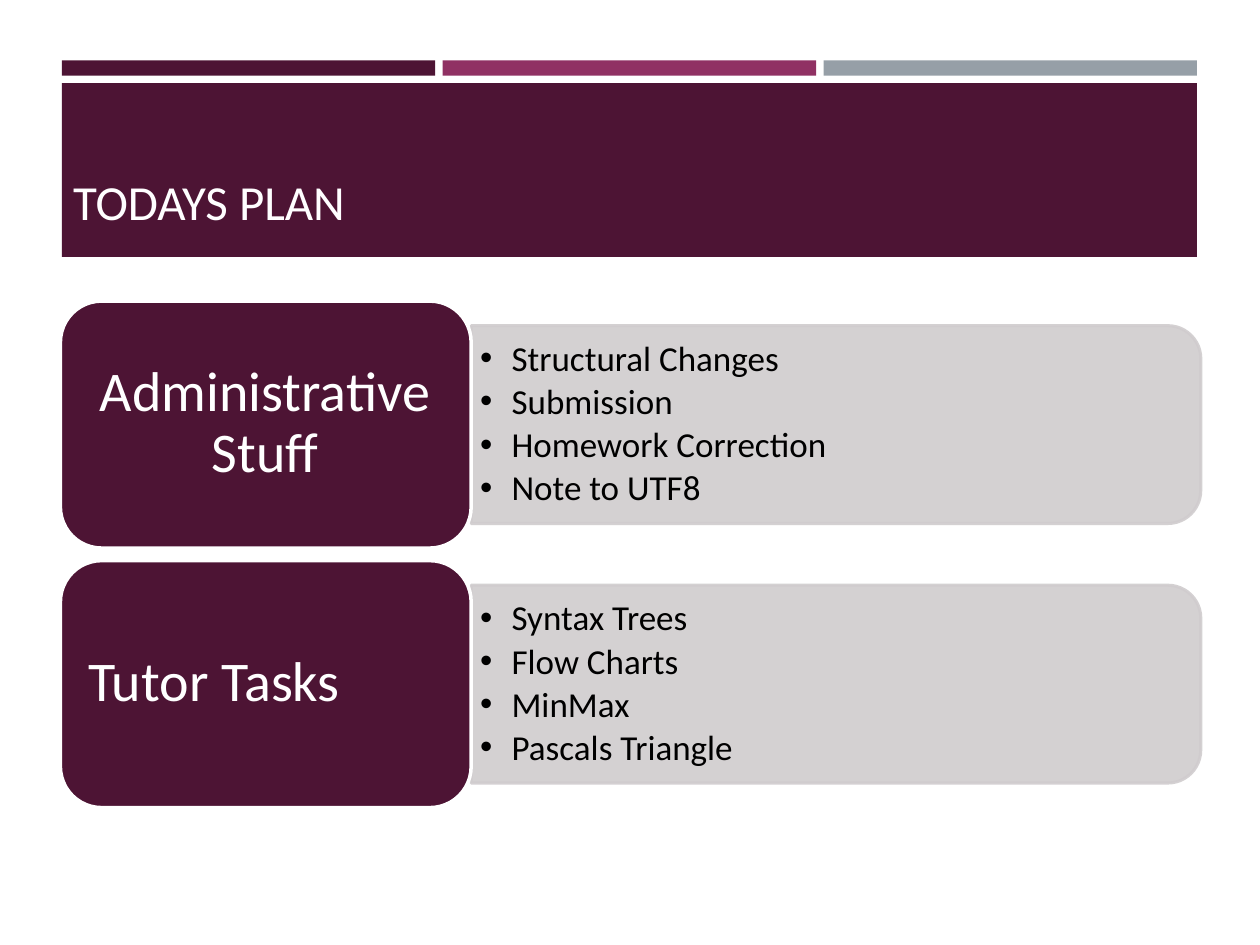
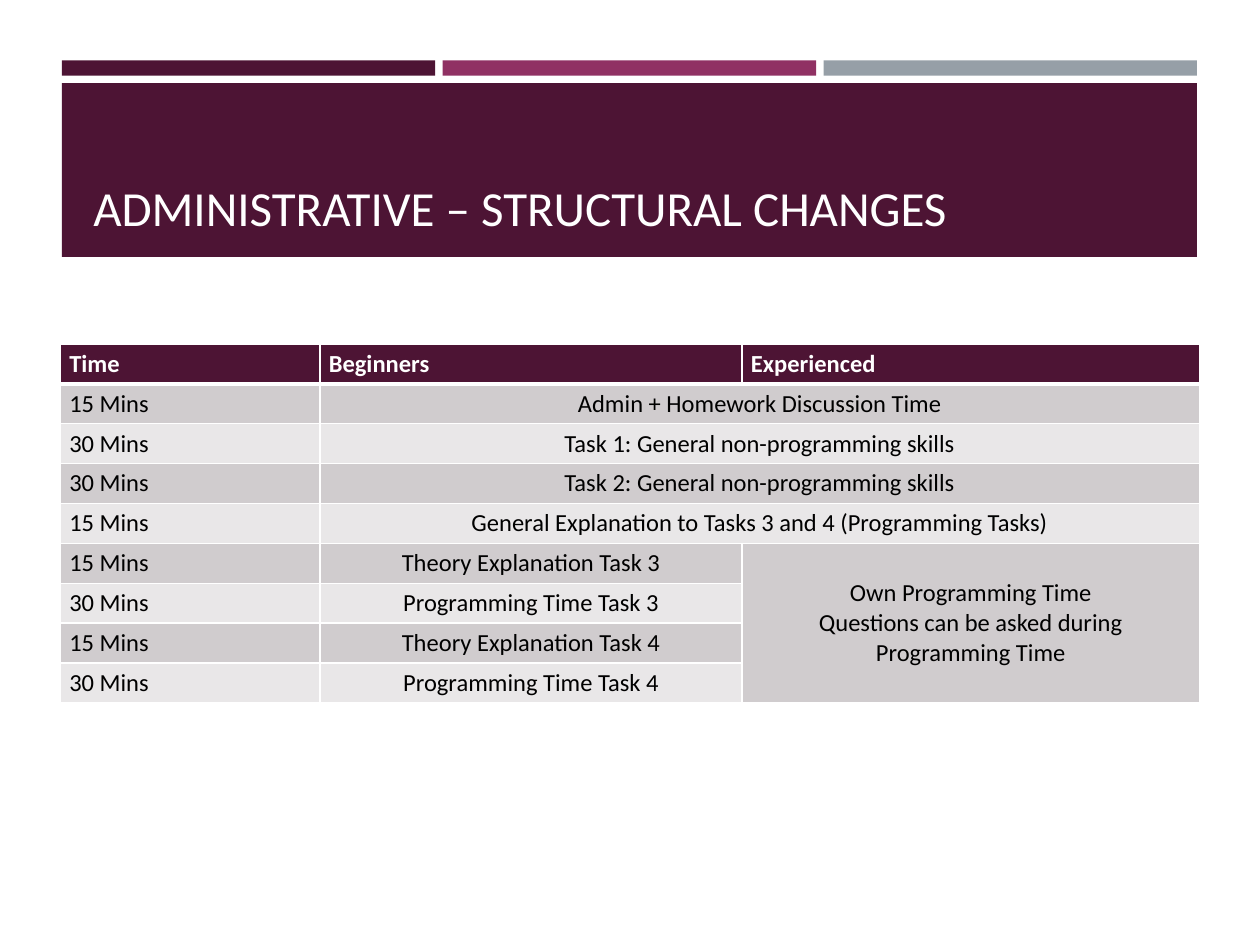
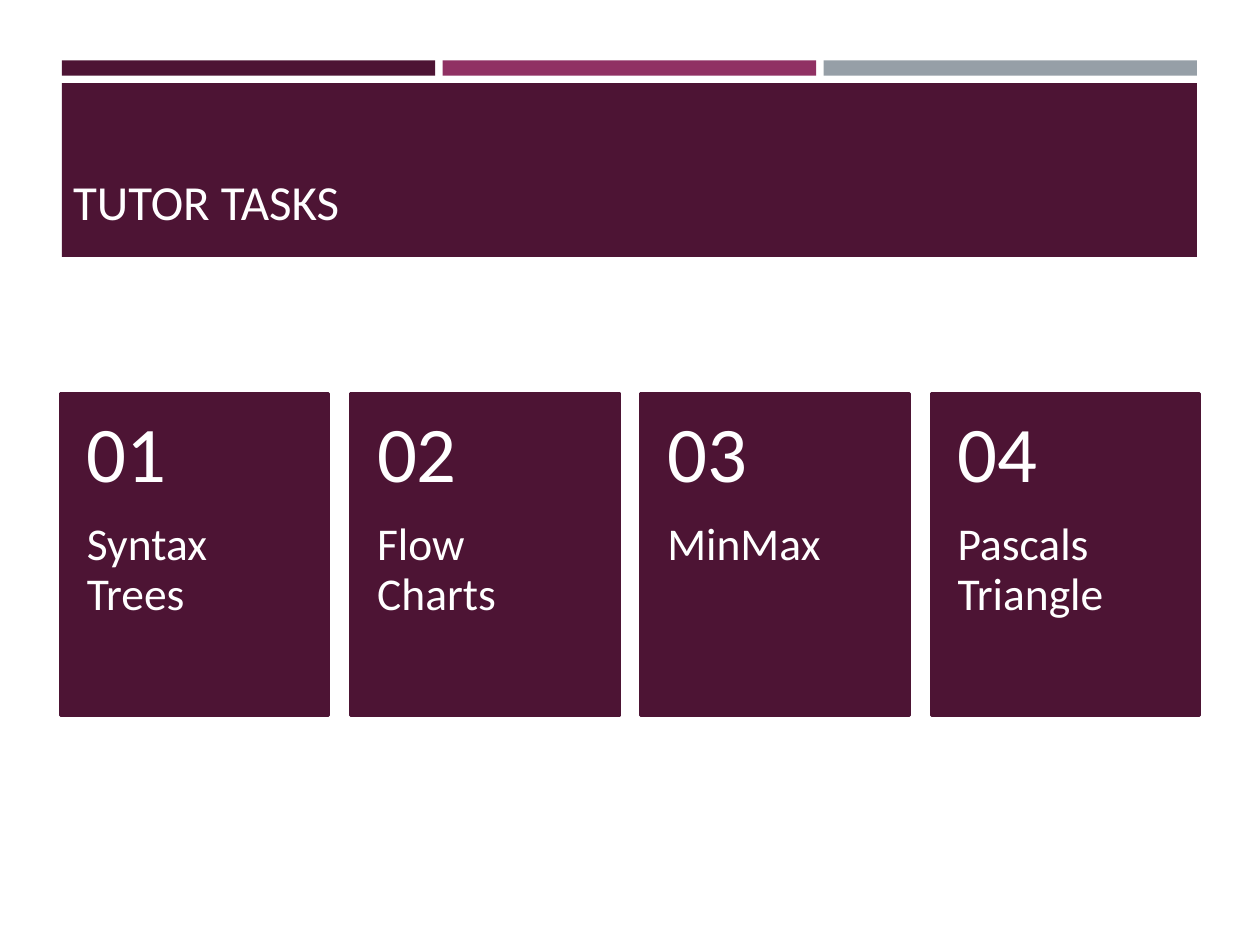
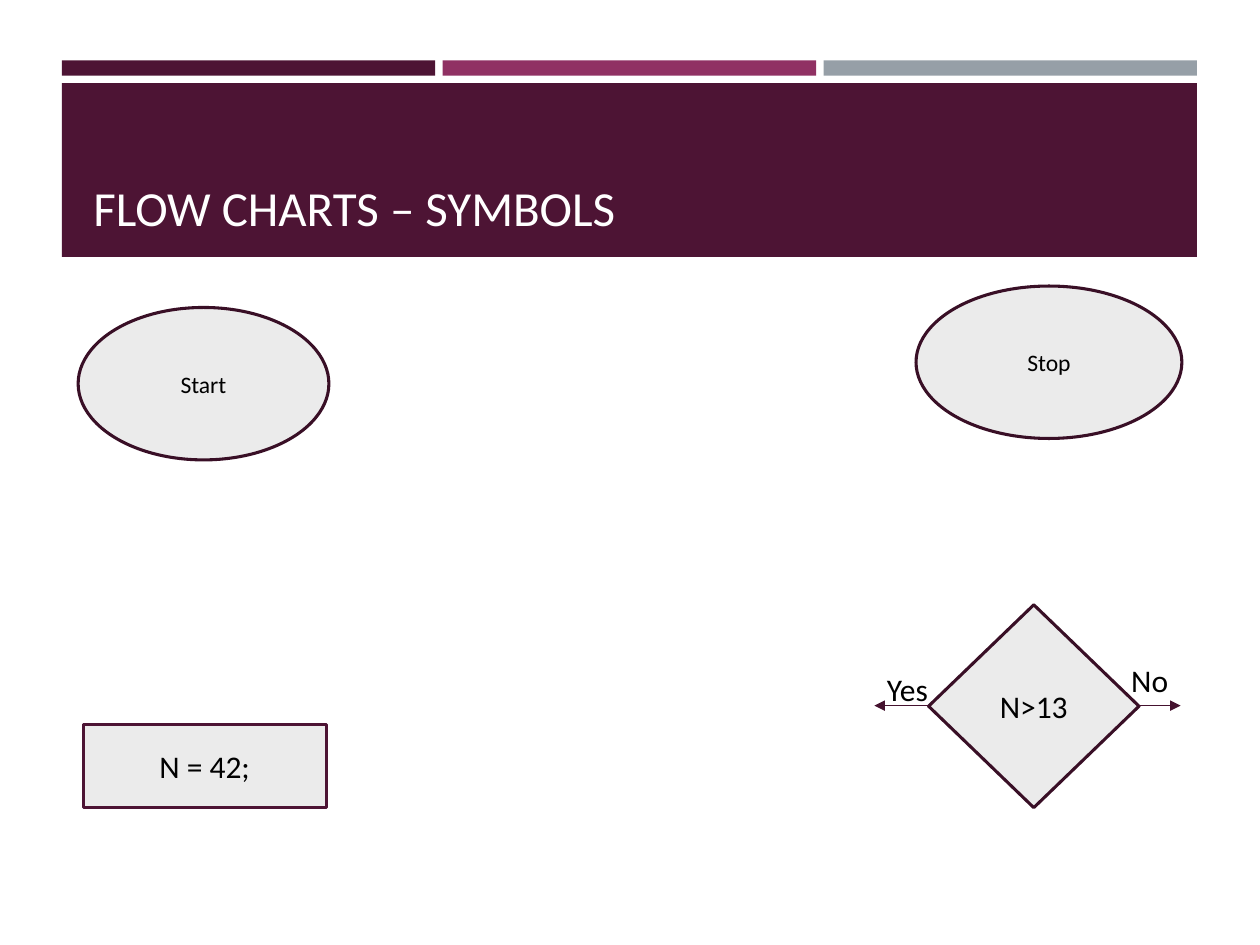
from dataclasses import dataclass

from pptx import Presentation
from pptx.dml.color import RGBColor
from pptx.enum.shapes import MSO_CONNECTOR, MSO_SHAPE
from pptx.enum.text import MSO_ANCHOR, MSO_AUTO_SIZE, PP_ALIGN
from pptx.oxml.ns import qn
from pptx.oxml.xmlchemy import OxmlElement
from pptx.util import Inches, Pt

LEFT, CENTER = PP_ALIGN.LEFT, PP_ALIGN.CENTER
TOP, MIDDLE, BOTTOM = MSO_ANCHOR.TOP, MSO_ANCHOR.MIDDLE, MSO_ANCHOR.BOTTOM
NO_FIT, GROW = MSO_AUTO_SIZE.NONE, MSO_AUTO_SIZE.SHAPE_TO_FIT_TEXT
RECT, ROUND_RECT = MSO_SHAPE.RECTANGLE, MSO_SHAPE.ROUNDED_RECTANGLE
ROUND_TOP = MSO_SHAPE.ROUND_2_SAME_RECTANGLE
OVAL, DIAMOND = MSO_SHAPE.OVAL, MSO_SHAPE.DIAMOND
STRAIGHT = MSO_CONNECTOR.STRAIGHT
TITLE_ONLY, TWO_CONTENT = 5, 3


@dataclass(frozen=True)
class Theme:
    font: str = "Calibri"
    plum: str = "4D1434"
    magenta: str = "903163"
    slate: str = "969FA7"
    panel: str = "D0CCCE"
    pale_row: str = "E9E7E8"
    symbol: str = "EBEBEB"
    outline: str = "390F26"
    arrow: str = "45122F"
    white: str = "FFFFFF"
    title_white: str = "FFFEFF"
    black: str = "000000"
    title_size: float = 28
    label_size: float = 32
    list_size: float = 20
    table_size: float = 14
    number_size: float = 45
    card_size: float = 26
    symbol_size: float = 18
    oval_size: float = 13.5
    line: float = 1.75


THEME = Theme()

# Content
PLAN = [
    ("Administrative Stuff", CENTER,
     ["Structural Changes", "Submission", "Homework Correction", "Note to UTF8"]),
    ("Tutor Tasks", LEFT,
     ["Syntax Trees", "Flow Charts", "MinMax", "Pascals Triangle"]),
]
TASKS = PLAN[1][2]
SCHEDULE = [
    ("Time", "Beginners", "Experienced"),
    ("15 Mins", "Admin + Homework Discussion Time"),
    ("30 Mins", "Task 1: General non-programming skills"),
    ("30 Mins", "Task 2: General non-programming skills"),
    ("15 Mins", "General Explanation to Tasks 3 and 4 (Programming Tasks)"),
    ("15 Mins", "Theory Explanation Task 3",
     "Own Programming Time\nQuestions can be asked during Programming Time"),
    ("30 Mins", "Programming Time Task 3", ""),
    ("15 Mins", "Theory Explanation Task 4", ""),
    ("30 Mins", "Programming Time Task 4", ""),
]
OWN_TIME_ROW = 5
SYMBOLS = [
    (RECT, (0.66, 5.75, 1.93, 0.66), "N = 42;", THEME.symbol_size, THEME.plum),
    (DIAMOND, (7.37, 4.8, 1.67, 1.61), "N>13", THEME.symbol_size, THEME.outline),
    (OVAL, (0.62, 2.44, 1.99, 1.21), "Start", THEME.oval_size, THEME.outline),
    (OVAL, (7.27, 2.27, 2.11, 1.21), "Stop", THEME.oval_size, THEME.outline),
]
BRANCHES = [
    ("Yes", (6.94, 5.27, 0.66, 0.4), 7.37, 6.94),
    ("No", (8.88, 5.2, 0.66, 0.4), 9.04, 9.37),
]

# Shared geometry
BAND_LEFT, BAND_WIDTH, BAND_GAP = 0.49, 9.01, 0.06
CONTENT_LEFT, CONTENT_WIDTH = 0.48, 9.04
WIDE_TITLE = (0.48, 0.77, 9.05, 1.11)
INSET_TITLE = (0.64, 0.75, 8.74, 1.18)
SMALL_MARGINS = (0.07, 0.04, 0.07, 0.04)


def color(value):
    return RGBColor.from_string(value)


def place(shape, area):
    for name, length in zip(("left", "top", "width", "height"), area):
        setattr(shape, name, Inches(length))


def set_margins(target, margins):
    for side, length in zip(("left", "top", "right", "bottom"), margins):
        setattr(target, f"margin_{side}", Inches(length))


def write(frame, lines, size, ink=THEME.black, align=LEFT, bold=False, **paragraph_format):
    """Fill a text frame with one paragraph per line."""
    frame.text = "\n".join(lines)
    for para in frame.paragraphs:
        for name, value in {"alignment": align, **paragraph_format}.items():
            setattr(para, name, value)
        for span in para.runs:
            font_format = {"name": THEME.font, "size": Pt(size), "bold": bold}
            for name, value in font_format.items():
                setattr(span.font, name, value)
            span.font.color.rgb = color(ink)


def set_frame(frame, anchor=TOP, margins=(0.1, 0.05, 0.1, 0.05), fit=NO_FIT):
    frame.word_wrap = True
    frame.auto_size = fit
    frame.vertical_anchor = anchor
    set_margins(frame, margins)


def add_shape(page, kind, area, fill, line=None, line_width=THEME.line):
    shape = page.shapes.add_shape(kind, *map(Inches, area))
    shape.shadow.inherit = False
    shape.fill.solid()
    shape.fill.fore_color.rgb = color(fill)
    if line:
        shape.line.color.rgb = color(line)
        shape.line.width = Pt(line_width)
    else:
        shape.line.fill.background()
    return shape


def add_text(page, area, lines, size, anchor=TOP, margins=(0.1, 0.05, 0.1, 0.05),
             fit=NO_FIT, **text_format):
    box = page.shapes.add_textbox(*map(Inches, area))
    set_frame(box.text_frame, anchor, margins, fit)
    write(box.text_frame, lines, size, **text_format)


def add_page(deck, layout, title, area, ink=THEME.white):
    page = deck.slides.add_slide(deck.slide_layouts[layout])
    box = page.shapes.title
    place(box, area)
    set_frame(box.text_frame, BOTTOM)
    write(box.text_frame, [title], THEME.title_size, ink)
    return page


def move_bands_to_master(deck, page):
    """Draw the header bands once and hand them to the slide master."""
    width = (BAND_WIDTH - 2 * BAND_GAP) / 3
    bands = [
        add_shape(page, RECT, (BAND_LEFT + i * (width + BAND_GAP), 0.48, width, 0.12), fill)
        for i, fill in enumerate((THEME.plum, THEME.magenta, THEME.slate))
    ]
    bands.append(add_shape(page, RECT, (BAND_LEFT, 0.66, BAND_WIDTH, 1.38), THEME.plum))
    tree = deck.slide_master.shapes.element
    for i, band in enumerate(bands):
        band.element.nvSpPr.cNvPr.set("id", str(100 + i))
        tree.insert(2 + i, band.element)


def make_translucent(shape, percent):
    for paint in shape.element.spPr.iter(qn("a:srgbClr")):
        alpha = OxmlElement("a:alpha")
        alpha.set("val", str(percent * 1000))
        paint.append(alpha)


# Slide 1: topics with their lists
def build_plan(page):
    label_width, label_height, step = 3.26, 1.96, 2.06
    panel_length, panel_height = 5.79, 1.57
    panel_left = CONTENT_LEFT + label_width
    bodies = [box for box in page.placeholders if box.placeholder_format.idx]
    for i, (body, (label, align, items)) in enumerate(zip(bodies, PLAN)):
        top = 2.39 + i * step
        middle = top + label_height / 2
        # The panel is drawn upright and turned, so its rounded end faces right
        panel = add_shape(
            page, ROUND_TOP,
            (panel_left + (panel_length - panel_height) / 2, middle - panel_length / 2,
             panel_height, panel_length),
            THEME.panel, THEME.panel)
        panel.rotation = 90
        make_translucent(panel, 90)

        page.shapes.element.append(body.element)
        place(body, (3.73, middle - 0.71, 5.71, 1.42))
        set_frame(body.text_frame, MIDDLE, (0.08, 0.04, 0.08, 0.04))
        write(body.text_frame, items, THEME.list_size, line_spacing=0.9,
              space_before=Pt(0), space_after=Pt(3))
        for para in body.text_frame.paragraphs:
            properties = para._p.get_or_add_pPr()
            properties.set("marL", str(Inches(0.25)))
            properties.set("indent", str(-Inches(0.25)))

        add_shape(page, ROUND_RECT, (CONTENT_LEFT, top, label_width, label_height),
                  THEME.plum, THEME.white, 2)
        add_text(page, (0.57, top + 0.09, 3.07, 1.77), [label], THEME.label_size, MIDDLE,
                 (0.13, 0.07, 0.13, 0.07), ink=THEME.white, align=align, line_spacing=0.9)


# Slide 2: schedule table
def add_borders(cell, bottom_width):
    properties = cell._tc.get_or_add_tcPr()
    for i, side in enumerate("LRTB"):
        line = OxmlElement(f"a:ln{side}")
        line.set("w", str(Pt(bottom_width if side == "B" else 1)))
        fill, paint = OxmlElement("a:solidFill"), OxmlElement("a:srgbClr")
        paint.set("val", THEME.white)
        fill.append(paint)
        line.append(fill)
        properties.insert(i, line)


def build_schedule(page):
    widths, row_height = (2.06, 3.35, 3.63), 0.31
    area = (CONTENT_LEFT, 2.73, sum(widths), row_height * len(SCHEDULE))
    table = page.shapes.add_table(len(SCHEDULE), len(widths), *map(Inches, area)).table
    for column, width in zip(table.columns, widths):
        column.width = Inches(width)
    for r, texts in enumerate(SCHEDULE):
        header = r == 0
        fill = THEME.plum if header else (THEME.panel if r % 2 else THEME.pale_row)
        for c in range(len(widths)):
            cell = table.cell(r, c)
            cell.fill.solid()
            cell.fill.fore_color.rgb = color(fill)
            add_borders(cell, 3 if header else 1)
            set_margins(cell, SMALL_MARGINS)
            centered = c > 0 and not header
            cell.vertical_anchor = MIDDLE if centered else TOP
            if c < len(texts) and texts[c]:
                write(cell.text_frame, texts[c].split("\n"), THEME.table_size,
                      THEME.white if header else THEME.black,
                      CENTER if centered else LEFT, header)
        if len(texts) == 2:
            table.cell(r, 1).merge(table.cell(r, 2))
    table.cell(OWN_TIME_ROW, 2).merge(table.cell(len(SCHEDULE) - 1, 2))


# Slide 3: numbered cards
def build_cards(page):
    width, height, top, number_height = 2.13, 2.56, 3.12, 1.02
    step = (CONTENT_WIDTH - width) / (len(TASKS) - 1)
    for i, task in enumerate(TASKS):
        left = CONTENT_LEFT + i * step
        add_shape(page, RECT, (left, top, width, height), THEME.plum, THEME.plum)
        add_text(page, (left, top + number_height, width, height - number_height), [task],
                 THEME.card_size, TOP, (0.21, 0, 0.21, 0.36),
                 ink=THEME.white, line_spacing=0.9)
        add_text(page, (left, top, width, number_height), [f"{i + 1:02d}"],
                 THEME.number_size, MIDDLE, (0.21, 0.18, 0.21, 0.18),
                 ink=THEME.white, line_spacing=0.9)


# Slide 4: flow chart symbols
def add_arrow(page, start, end, y):
    arrow = page.shapes.add_connector(STRAIGHT, *map(Inches, (start, y, end, y)))
    arrow.line.color.rgb = color(THEME.arrow)
    arrow.line.width = Pt(1)
    head = OxmlElement("a:tailEnd")
    head.set("type", "triangle")
    arrow.line._get_or_add_ln().append(head)
    arrow.element.spPr.append(OxmlElement("a:effectLst"))


def build_symbols(page):
    for kind, area, text, size, line in SYMBOLS:
        shape = add_shape(page, kind, area, THEME.symbol, line)
        set_frame(shape.text_frame, MIDDLE, SMALL_MARGINS)
        write(shape.text_frame, [text], size, align=CENTER)
    for text, area, start, end in BRANCHES:
        add_arrow(page, start, end, 5.6)
        add_text(page, area, [text], THEME.symbol_size, fit=GROW)


PAGES = [
    (TWO_CONTENT, "TODAYS PLAN", WIDE_TITLE, THEME.title_white, build_plan),
    (TITLE_ONLY, "ADMINISTRATIVE – STRUCTURAL CHANGES", INSET_TITLE, THEME.white,
     build_schedule),
    (TITLE_ONLY, "TUTOR TASKS", WIDE_TITLE, THEME.title_white, build_cards),
    (TITLE_ONLY, "FLOW CHARTS – SYMBOLS", INSET_TITLE, THEME.white, build_symbols),
]


def main():
    deck = Presentation()
    deck.slide_width, deck.slide_height = Inches(10), Inches(7.5)
    for i, (layout, title, area, ink, build) in enumerate(PAGES):
        page = add_page(deck, layout, title, area, ink)
        if i == 0:
            move_bands_to_master(deck, page)
        build(page)
    deck.save("out.pptx")


if __name__ == "__main__":
    main()
